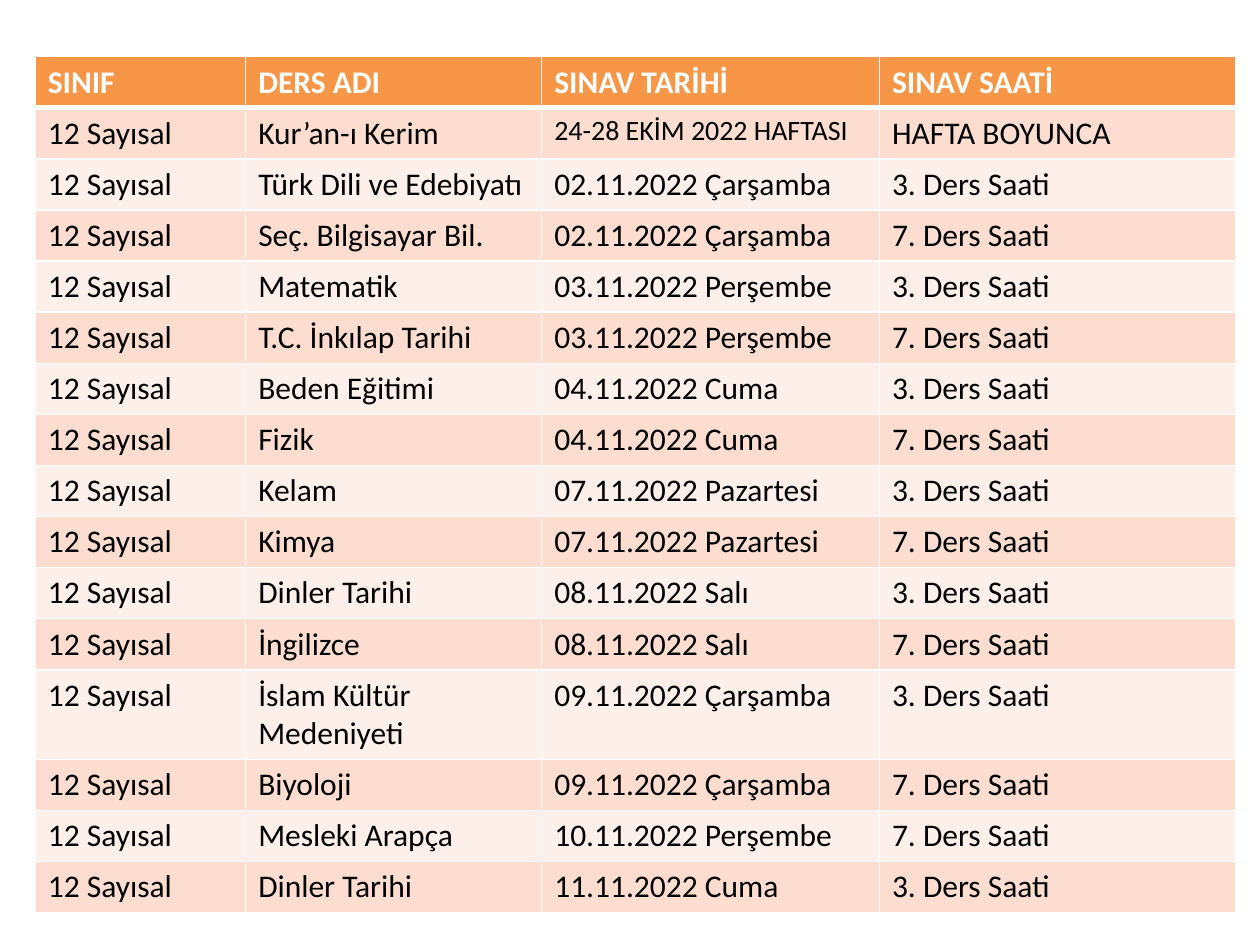
from pptx import Presentation
from pptx.dml.color import RGBColor as RGB
from pptx.oxml.ns import qn
from pptx.util import Inches, Pt
from lxml.etree import SubElement as Sub

COLORS = {"header": "F79646", "odd": "FCDDCF", "even": "FDEFE9",
          "white": "FFFFFF", "text": "000000"}
HEADER = ["SINIF", "DERS ADI", "SINAV TARİHİ", "SINAV SAATİ"]
CLASS_NAME = "12 Sayısal"
EXAM_WEEK = "24-28 EKİM 2022 HAFTASI"
EXAMS = [
    ("Kur’an-ı Kerim", EXAM_WEEK, "HAFTA BOYUNCA"),
    ("Türk Dili ve Edebiyatı", "02.11.2022 Çarşamba", "3. Ders Saati"),
    ("Seç. Bilgisayar Bil.", "02.11.2022 Çarşamba", "7. Ders Saati"),
    ("Matematik", "03.11.2022 Perşembe", "3. Ders Saati"),
    ("T.C. İnkılap Tarihi", "03.11.2022 Perşembe", "7. Ders Saati"),
    ("Beden Eğitimi", "04.11.2022 Cuma", "3. Ders Saati"),
    ("Fizik", "04.11.2022 Cuma", "7. Ders Saati"),
    ("Kelam", "07.11.2022 Pazartesi", "3. Ders Saati"),
    ("Kimya", "07.11.2022 Pazartesi", "7. Ders Saati"),
    ("Dinler Tarihi", "08.11.2022 Salı", "3. Ders Saati"),
    ("İngilizce", "08.11.2022 Salı", "7. Ders Saati"),
    ("İslam Kültür Medeniyeti", "09.11.2022 Çarşamba", "3. Ders Saati"),
    ("Biyoloji", "09.11.2022 Çarşamba", "7. Ders Saati"),
    ("Mesleki Arapça", "10.11.2022 Perşembe", "7. Ders Saati"),
    ("Dinler Tarihi", "11.11.2022 Cuma", "3. Ders Saati"),
]
COL_WIDTHS = [1.67, 2.35, 2.68, 2.83]


def set_borders(cell, widths):
    """Draw white cell edges; widths maps side letters to points."""
    tc_pr = cell._tc.get_or_add_tcPr()
    for side, width in widths.items():
        ln = Sub(tc_pr, qn(f"a:ln{side}"), w=str(Pt(width)))
        Sub(Sub(ln, qn("a:solidFill")), qn("a:srgbClr"), val=COLORS["white"])


def fill_cell(cell, text, fill, font, borders):
    set_borders(cell, borders)
    cell.fill.solid()
    cell.fill.fore_color.rgb = RGB.from_string(COLORS[fill])
    r = cell.text_frame.paragraphs[0].add_run()
    r.text = text
    r.font.color.rgb = RGB.from_string(COLORS[font["color"]])
    for name in ("name", "size", "bold"):
        setattr(r.font, name, font[name])


def add_exam_table(slide, left, top, width, height):
    rows = [HEADER] + [(CLASS_NAME, *exam) for exam in EXAMS]
    table = slide.shapes.add_table(len(rows), len(HEADER), Inches(left), Inches(top),
                                   Inches(width), Inches(height)).table
    for col, col_width in zip(table.columns, COL_WIDTHS):
        col.width = Inches(col_width)
    for i, row in enumerate(rows):
        table.rows[i].height = Inches(height / len(rows))
        is_header = i == 0
        fill = "header" if is_header else "odd" if i % 2 else "even"
        # The rule under the header is thicker than the grid
        borders = {"L": 1, "R": 1, "T": 3 if i == 1 else 1, "B": 3 if is_header else 1}
        for j, text in enumerate(row):
            font = {"name": "Calibri", "size": Pt(16 if text == EXAM_WEEK else 18),
                    "bold": is_header, "color": "white" if is_header else "text"}
            fill_cell(table.cell(i, j), text, fill, font, borders)


def main():
    prs = Presentation()
    prs.slide_width, prs.slide_height = Inches(10), Inches(7.5)
    slide = prs.slides.add_slide(prs.slide_layouts[6])
    add_exam_table(slide, 0.28, 0.45, sum(COL_WIDTHS), 6.48)
    prs.save("out.pptx")


if __name__ == "__main__":
    main()
